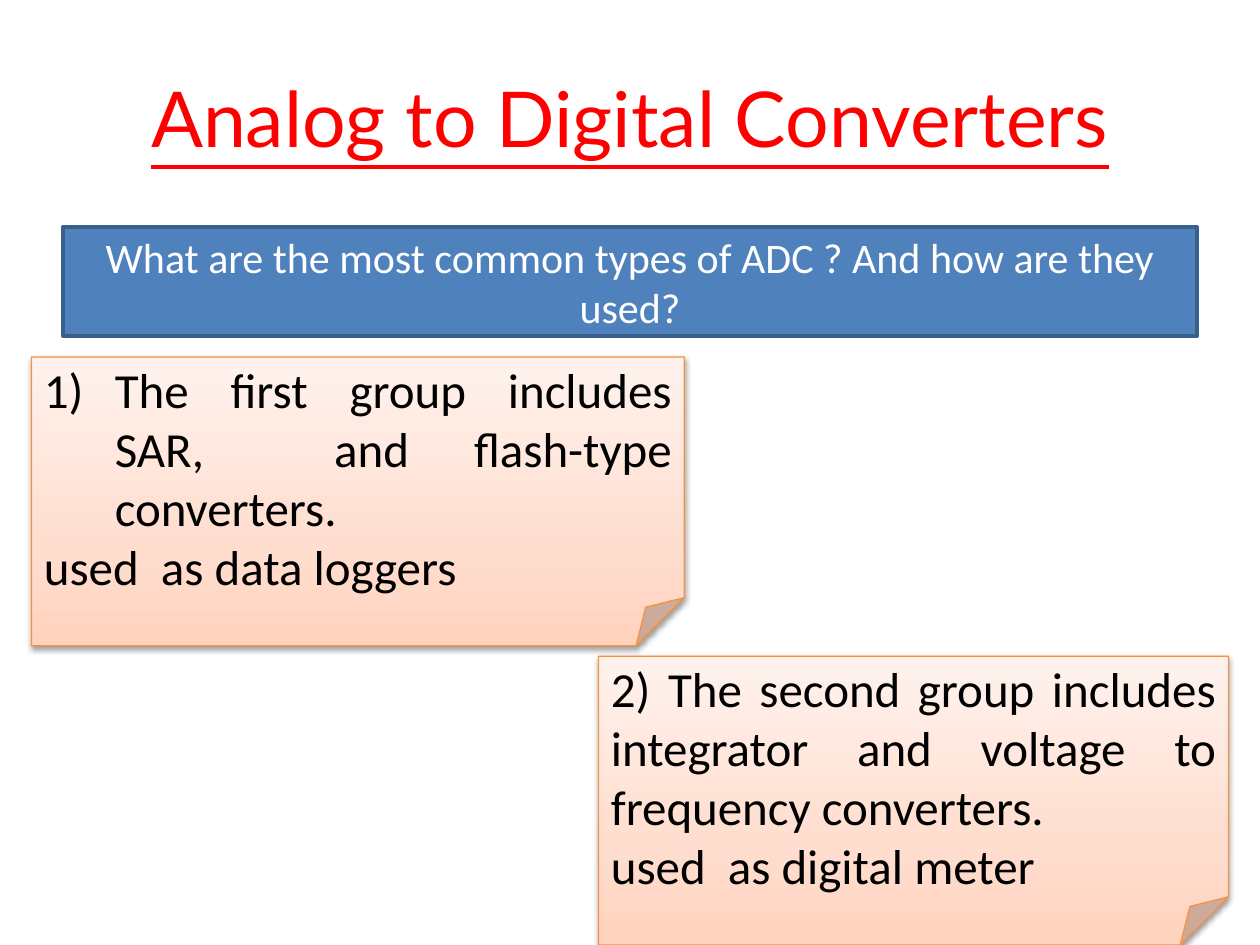
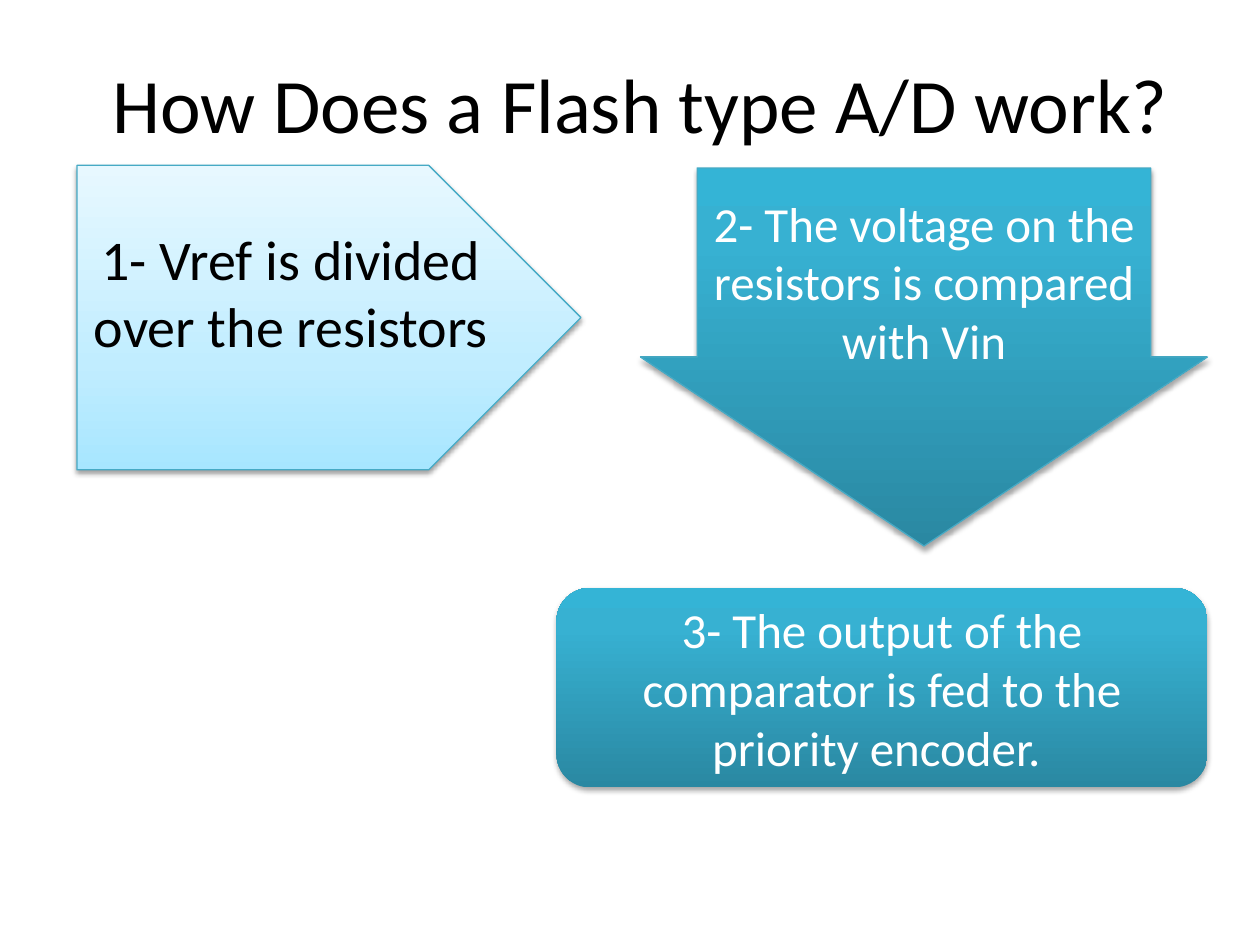
import copy

import pptx
import pptx.dml.color
import pptx.enum.shapes
import pptx.enum.text
import pptx.oxml
import pptx.oxml.ns
import pptx.util

Pt = pptx.util.Pt
SHAPE = pptx.enum.shapes.MSO_SHAPE
ALIGN = pptx.enum.text.PP_ALIGN
BODY_FONT = "Calibri"
TITLE_ONLY = 5

PEACH = [(0, "FFD2BD"), (0.35, "FFDED0"), (1, "FFF2ED")]
ICE = [(0, "A7E6FF"), (0.35, "C1EDFF"), (1, "E7F8FF")]
TEAL = [(0, "2A88A2"), (0.8, "37B1D2"), (1, "34B4D6")]
ORANGE_EDGE, TEAL_EDGE = "F69240", "46AAC5"
SOFT_SHADOW = (38, 1.6)
DEEP_SHADOW = (35, 1.8)


def color(hex_string):
    """Turn a hex string into a colour."""
    return pptx.dml.color.RGBColor.from_string(hex_string)


def add_run(paragraph, text, size, hex_string, font=BODY_FONT, underline=None):
    """Append one formatted run."""
    run = paragraph.add_run()
    run.text = text
    run.font.size = Pt(size)
    run.font.name = font
    run.font.underline = underline
    run.font.color.rgb = color(hex_string)


def add_title_slide(presentation, text, box, hex_string, font=BODY_FONT, underline=None):
    """Add a title-only slide and format its title."""
    slide = presentation.slides.add_slide(presentation.slide_layouts[TITLE_ONLY])
    title = slide.shapes.title
    title.left, title.top, title.width, title.height = map(Pt, box)
    title.text_frame.vertical_anchor = pptx.enum.text.MSO_ANCHOR.MIDDLE
    paragraph = title.text_frame.paragraphs[0]
    paragraph.alignment = ALIGN.CENTER
    add_run(paragraph, text, 44, hex_string, font, underline)
    return slide


def set_gradient(shape, stops):
    """Fill a shape with a gradient that rises from bottom to top."""
    shape.fill.gradient()
    shape.fill.gradient_angle = 90
    stop_list = shape.element.spPr.find(".//" + pptx.oxml.ns.qn("a:gsLst"))
    while len(stop_list) < len(stops):
        stop_list.append(copy.deepcopy(stop_list[0]))
    for stop, (position, hex_string) in zip(shape.fill.gradient_stops, stops):
        stop.position = position
        stop.color.rgb = color(hex_string)


def set_shadow(shape, opacity, distance):
    """Give a shape a soft shadow below it."""
    effects = shape.element.spPr.find(pptx.oxml.ns.qn("a:effectLst"))
    effects.append(pptx.oxml.parse_xml(
        f'<a:outerShdw {pptx.oxml.ns.nsdecls("a")} blurRad="{Pt(3.1)}" '
        f'dist="{Pt(distance)}" dir="5400000" rotWithShape="0"><a:srgbClr val="000000">'
        f'<a:alpha val="{opacity * 1000}"/></a:srgbClr></a:outerShdw>'))


def number_paragraph(paragraph):
    """Number a paragraph as 1) with a hanging indent."""
    properties = paragraph._p.get_or_add_pPr()
    properties.set("marL", str(Pt(40.5)))
    properties.set("indent", str(Pt(-40.5)))
    properties.append(pptx.oxml.parse_xml(
        f'<a:buAutoNum {pptx.oxml.ns.nsdecls("a")} type="arabicParenR"/>'))


def add_panel(slide, kind, box, texts, fill, edge=None, edge_width=0.75,
              shadow=None, size=28, text_color="FFFFFF", alignment=ALIGN.CENTER):
    """Add a filled preset shape that holds text."""
    shape = slide.shapes.add_shape(kind, *map(Pt, box))
    shape.shadow.inherit = False
    if isinstance(fill, str):
        shape.fill.solid()
        shape.fill.fore_color.rgb = color(fill)
    else:
        set_gradient(shape, fill)
    if edge:
        shape.line.color.rgb = color(edge)
        shape.line.width = Pt(edge_width)
    else:
        shape.line.fill.background()
    if shadow:
        set_shadow(shape, *shadow)
    frame = shape.text_frame
    frame.word_wrap = True
    frame.vertical_anchor = pptx.enum.text.MSO_ANCHOR.MIDDLE
    for index, text in enumerate(texts):
        paragraph = frame.add_paragraph() if index else frame.paragraphs[0]
        paragraph.alignment = alignment
        add_run(paragraph, text, size, text_color)
    return shape


def add_note(slide, box, texts):
    """Add a peach note with a folded corner."""
    return add_panel(slide, SHAPE.FOLDED_CORNER, box, texts, PEACH, ORANGE_EDGE,
                     shadow=SOFT_SHADOW, text_color="000000", alignment=ALIGN.JUSTIFY)


def build_converter_slide(presentation):
    """Build the slide on converter groups."""
    slide = add_title_slide(presentation, "Analog to Digital Converters",
                            (36, 21.6, 648, 90), "FF0000", "Lato", True)
    first_group = add_note(slide, (18, 204, 373, 165), [
        "The first group includes SAR,  and flash-type converters.",
        "used  as data loggers"])
    number_paragraph(first_group.text_frame.paragraphs[0])
    add_note(slide, (342, 375, 360, 165), [
        "2) The second group includes integrator and voltage to frequency converters.",
        "used  as digital meter"])
    add_panel(slide, SHAPE.RECTANGLE, (36, 129.6, 648, 62.6),
              ["What are the most common types of ADC ? And how are they used?"],
              "4F81BD", "3A5F8C", edge_width=2, size=24)


def build_flash_slide(presentation):
    """Build the slide on the steps of a flash converter."""
    slide = add_title_slide(presentation, "How Does a Flash type A/D work?",
                            (42, 21.6, 648, 74), "000000")
    slide.shapes.title.fill.solid()
    slide.shapes.title.fill.fore_color.rgb = color("FFFFFF")
    divide_step = add_panel(slide, SHAPE.PENTAGON, (44, 94.5, 288, 174),
                            ["1- Vref is divided over the resistors"], ICE, TEAL_EDGE,
                            shadow=SOFT_SHADOW, size=32, text_color="000000")
    divide_step.text_frame.margin_bottom = Pt(32.8)
    compare_step = add_panel(slide, SHAPE.DOWN_ARROW, (366, 96, 324, 216),
                             ["2- The voltage on the resistors is compared with Vin"],
                             TEAL, TEAL_EDGE, shadow=DEEP_SHADOW)
    compare_step.adjustments[0] = 0.8
    compare_step.adjustments[1] = 0.5
    add_panel(slide, SHAPE.ROUNDED_RECTANGLE, (318, 336, 372, 114),
              ["3- The output of the comparator is fed to the priority encoder. "],
              TEAL, shadow=DEEP_SHADOW)


def main():
    """Build and save the presentation."""
    presentation = pptx.Presentation()
    presentation.slide_width = Pt(720)
    presentation.slide_height = Pt(540)
    build_converter_slide(presentation)
    build_flash_slide(presentation)
    presentation.save("out.pptx")


if __name__ == "__main__":
    main()
